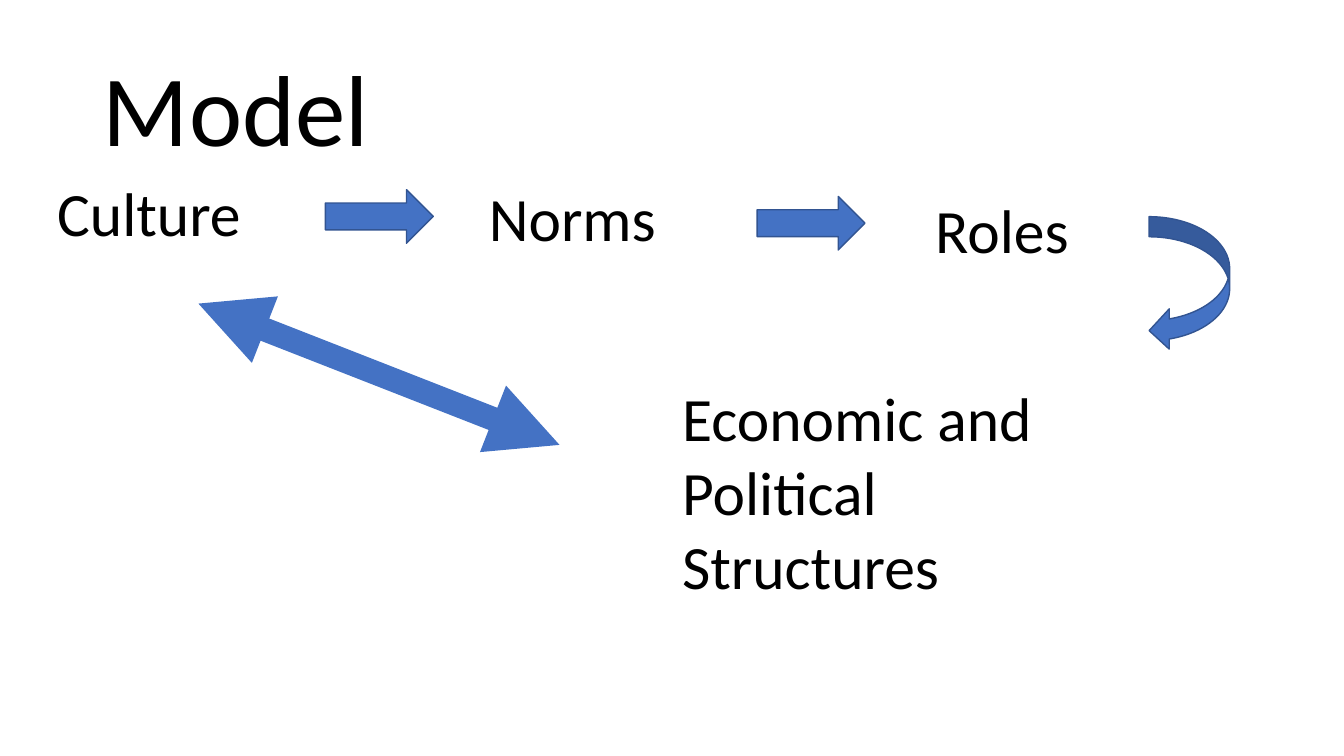
"""Build the slide showing the culture, norms, roles and structures model."""
from lxml.etree import SubElement
from pptx import Presentation
from pptx.dml.color import RGBColor
from pptx.enum.shapes import MSO_CONNECTOR as Connector, MSO_SHAPE as Shape
from pptx.enum.text import MSO_ANCHOR as Anchor, MSO_AUTO_SIZE as AutoSize, PP_ALIGN as Align
from pptx.oxml.ns import qn
from pptx.util import Cm, Pt

COLORS = {"text": "000000", "arrow": "4472C4", "outline": "325491"}
FONT = "Calibri"
TITLE = ("Model", (2.34, 1.02, 29.21, 3.68))
LABELS = [
    ("Culture", (1.19, 4.29, 7.01, 2.13), True),
    ("Norms", (12.07, 4.42, 5.87, 2.13), True),
    ("Economic and Political Structures", (16.94, 9.45, 10.31, 5.89), True),
    ("Roles", (23.32, 4.7, 3.91, 2.13), False),
]
ARROWS = [
    (Shape.RIGHT_ARROW, (8.2, 4.78, 2.72, 1.35)),
    (Shape.RIGHT_ARROW, (19.08, 4.95, 2.72, 1.35)),
    (Shape.CURVED_LEFT_ARROW, (28.96, 5.46, 2.03, 3.38)),
]
FEEDBACK = (5, 7.65, 14.1, 11.21)


def lengths(values):
    return [Cm(value) for value in values]


def color(name):
    return RGBColor.from_string(COLORS[name])


def write(frame, text, size, anchor=Anchor.TOP, spacing=1.0, wrap=True, fit=AutoSize.NONE):
    frame.word_wrap = wrap
    frame.auto_size = fit
    frame.vertical_anchor = anchor
    paragraph = frame.paragraphs[0]
    paragraph.alignment = Align.LEFT
    paragraph.line_spacing = spacing
    run = paragraph.add_run()
    run.text = text
    run.font.name = FONT
    run.font.size = Pt(size)
    run.font.color.rgb = color("text")


def add_arrow(slide, kind, box):
    shape = slide.shapes.add_shape(kind, *lengths(box))
    shape.shadow.inherit = False
    shape.fill.solid()
    shape.fill.fore_color.rgb = color("arrow")
    shape.line.color.rgb = color("outline")
    shape.line.width = Pt(1)


def add_double_arrow(slide, ends):
    connector = slide.shapes.add_connector(Connector.STRAIGHT, *lengths(ends))
    connector.line.color.rgb = color("arrow")
    connector.line.width = Pt(17)
    line = connector.line._get_or_add_ln()
    for end in ("a:headEnd", "a:tailEnd"):
        SubElement(line, qn(end), type="triangle")
    SubElement(connector._element.spPr, qn("a:effectLst"))


def main():
    presentation = Presentation()
    presentation.slide_width, presentation.slide_height = Cm(33.87), Cm(19.05)
    slide = presentation.slides.add_slide(presentation.slide_layouts[5])

    text, box = TITLE
    title = slide.shapes.title
    title.left, title.top, title.width, title.height = lengths(box)
    write(title.text_frame, text, 72, anchor=Anchor.MIDDLE, spacing=0.9)

    for kind, box in ARROWS:
        add_arrow(slide, kind, box)
    for text, box, wrap in LABELS:
        label = slide.shapes.add_textbox(*lengths(box))
        write(label.text_frame, text, 44, wrap=wrap, fit=AutoSize.SHAPE_TO_FIT_TEXT)
    add_double_arrow(slide, FEEDBACK)

    presentation.save("out.pptx")


if __name__ == "__main__":
    main()
